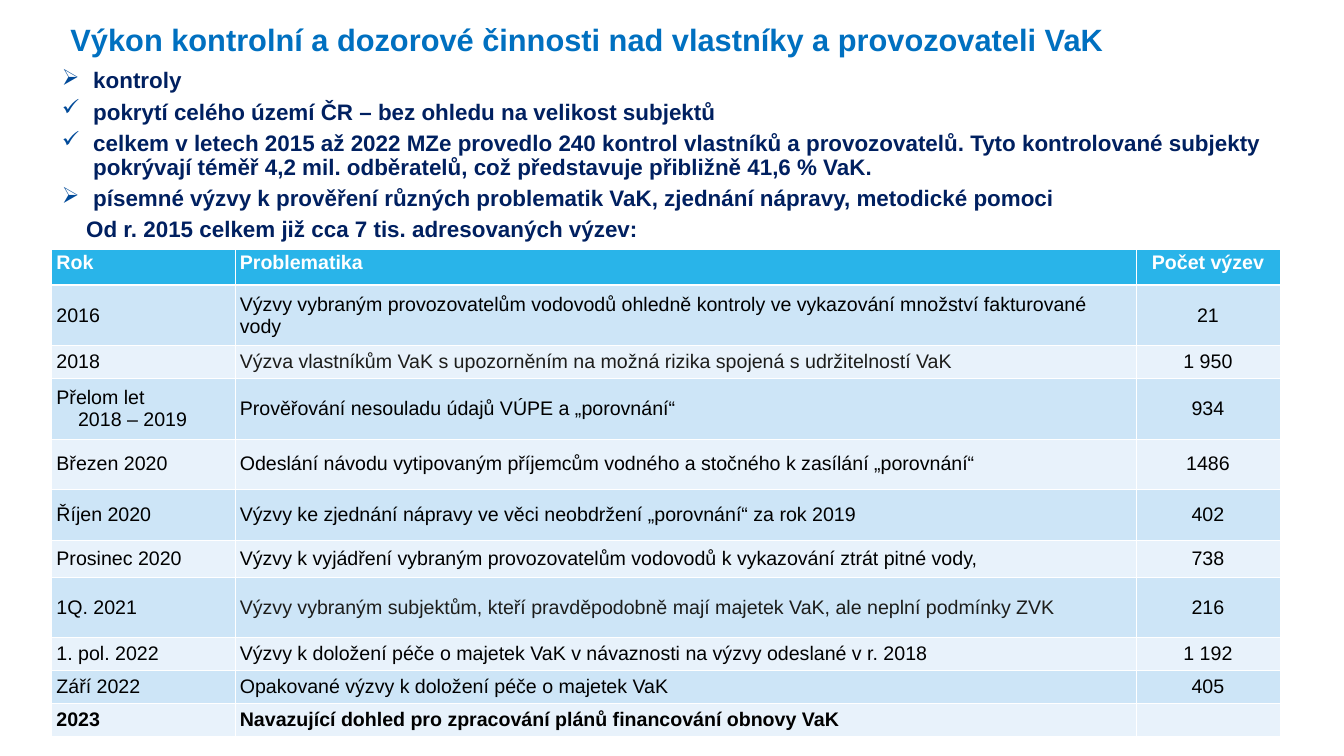
from lxml.etree import SubElement
from pptx import Presentation
from pptx.dml.color import RGBColor
from pptx.enum.text import MSO_ANCHOR, PP_ALIGN
from pptx.oxml.ns import qn
from pptx.util import Inches, Pt

FONT = "Arial"
COLORS = {
    "title": "0070C0", "point": "002060", "bullet": "004A99",
    "header": "29B4E9", "odd": "CDE5F7", "even": "E8F2FB",
    "white": "FFFFFF", "black": "000000", "soft": "1D1D1B",
}

TITLE = "Výkon kontrolní a dozorové činnosti nad vlastníky a provozovateli VaK"
POINTS = [  # bullet, text
    ("➢", "kontroly"),
    ("✓", "pokrytí celého území ČR – bez ohledu na velikost subjektů"),
    ("✓", "celkem v letech 2015 až 2022 MZe provedlo 240 kontrol vlastníků a provozovatelů. "
          "Tyto kontrolované subjekty pokrývají téměř 4,2 mil. odběratelů, což představuje "
          "přibližně 41,6 % VaK."),
    ("➢", "písemné výzvy k prověření různých problematik VaK, zjednání nápravy, metodické pomoci"),
    (None, "Od r. 2015 celkem již cca 7 tis. adresovaných výzev:"),
]
HEADER = ("Rok", "Problematika", "Počet výzev")
CALLS = [  # year, topic, number of calls, row height
    ("2016", "Výzvy vybraným provozovatelům vodovodů ohledně kontroly ve vykazování "
             "množství fakturované vody", "21", 1.2),
    ("2018", "Výzva vlastníkům VaK s upozorněním na možná rizika spojená "
             "s udržitelností VaK", "1 950", 0.65),
    ("Přelom let\n2018 – 2019", "Prověřování nesouladu údajů VÚPE a „porovnání“", "934", 1.2),
    ("Březen 2020", "Odeslání návodu vytipovaným příjemcům vodného a stočného "
                    "k zasílání „porovnání“", "1486", 0.99),
    ("Říjen 2020", "Výzvy ke zjednání nápravy ve věci neobdržení „porovnání“ za rok 2019",
     "402", 1.03),
    ("Prosinec 2020", "Výzvy k vyjádření vybraným provozovatelům vodovodů k vykazování "
                      "ztrát pitné vody,", "738", 0.72),
    ("1Q. 2021", "Výzvy vybraným subjektům, kteří pravděpodobně mají majetek VaK, "
                 "ale neplní podmínky ZVK", "216", 1.2),
    ("1. pol. 2022", "Výzvy k doložení péče o majetek VaK v návaznosti na výzvy "
                     "odeslané v r. 2018", "1 192", 0.65),
    ("Září 2022", "Opakované výzvy k doložení péče o majetek VaK", "405", 0.65),
    ("2023", "Navazující dohled pro zpracování plánů financování obnovy VaK", "", 0.65),
]
SOFT_YEARS = {"2018", "1Q. 2021"}
BOLD_YEARS = {"2023"}
HEADER_HEIGHT = 0.71
COLUMN_WIDTHS = (3.64, 17.88, 2.86)


def add_run(paragraph, text, size, color, bold=False):
    run = paragraph.add_run()
    run.text = text
    run.font.name = FONT
    run.font.size = Pt(size)
    run.font.bold = bold
    run.font.color.rgb = RGBColor.from_string(COLORS[color])


def add_text_frame(slide, left, top, width, height):
    frame = slide.shapes.add_textbox(*map(Inches, (left, top, width, height))).text_frame
    frame.word_wrap = True
    return frame


def indent(paragraph, left, first=0):
    properties = paragraph._p.get_or_add_pPr()
    properties.set("marL", str(Inches(left)))
    properties.set("indent", str(Inches(first)))
    return properties


def add_points(slide):
    frame = add_text_frame(slide, 0.83, 1.38, 25.4, 3.87)
    frame.margin_left = frame.margin_right = frame.margin_top = frame.margin_bottom = 0
    for i, (bullet, text) in enumerate(POINTS):
        paragraph = frame.add_paragraph() if i else frame.paragraphs[0]
        if bullet:
            properties = indent(paragraph, 1.02, -0.62)
            bullet_color = SubElement(properties, qn("a:buClr"))
            SubElement(bullet_color, qn("a:srgbClr"), val=COLORS["bullet"])
            SubElement(properties, qn("a:buChar"), char=bullet)
        else:
            indent(paragraph, 0.88)
        paragraph.line_spacing = 0.9
        paragraph.space_before = Pt(10 if i else 0)
        add_run(paragraph, text, 32, "point", True)


def set_borders(cell, top=1, bottom=1):
    properties = cell._tc.get_or_add_tcPr()
    for side, width in (("L", 1), ("R", 1), ("T", top), ("B", bottom)):
        line = SubElement(properties, qn(f"a:ln{side}"), w=str(Pt(width)))
        SubElement(SubElement(line, qn("a:solidFill")), qn("a:srgbClr"), val=COLORS["white"])


def fill_cell(cell, text, fill, color, bold, centred):
    cell.fill.solid()
    cell.fill.fore_color.rgb = RGBColor.from_string(COLORS[fill])
    frame = cell.text_frame
    for i, line in enumerate(text.split("\n") if text else []):
        paragraph = frame.add_paragraph() if i else frame.paragraphs[0]
        if i:
            indent(paragraph, 0.43)
        if centred:
            paragraph.alignment = PP_ALIGN.CENTER
        add_run(paragraph, line, 28, color, bold)


def add_calls_table(slide):
    heights = [HEADER_HEIGHT] + [call[-1] for call in CALLS]
    table = slide.shapes.add_table(
        len(heights), len(HEADER), Inches(1.02), Inches(4.95),
        Inches(sum(COLUMN_WIDTHS)), Inches(sum(heights))).table
    table.horz_banding = False
    for column, width in zip(table.columns, COLUMN_WIDTHS):
        column.width = Inches(width)
    for r, (height, texts) in enumerate(zip(heights, [HEADER] + [call[:3] for call in CALLS])):
        table.rows[r].height = Inches(height)
        year = texts[0]
        for c, text in enumerate(texts):
            cell = table.cell(r, c)
            set_borders(cell, top=3 if r == 1 else 1, bottom=3 if r == 0 else 1)
            if r == 0:
                fill, color = "header", "white"
            else:
                fill = "odd" if r % 2 else "even"
                color = "soft" if c == 1 and year in SOFT_YEARS else "black"
                cell.vertical_anchor = MSO_ANCHOR.MIDDLE
            fill_cell(cell, text, fill, color, r == 0 or year in BOLD_YEARS, c == 2)


def main():
    deck = Presentation()
    deck.slide_width, deck.slide_height = Inches(26.67), Inches(15)
    slide = deck.slides.add_slide(deck.slide_layouts[6])
    add_points(slide)
    add_calls_table(slide)
    title = add_text_frame(slide, 1.3, 0.37, 24.38, 0.84)
    add_run(title.paragraphs[0], TITLE, 44, "title", True)
    deck.save("out.pptx")


if __name__ == "__main__":
    main()
